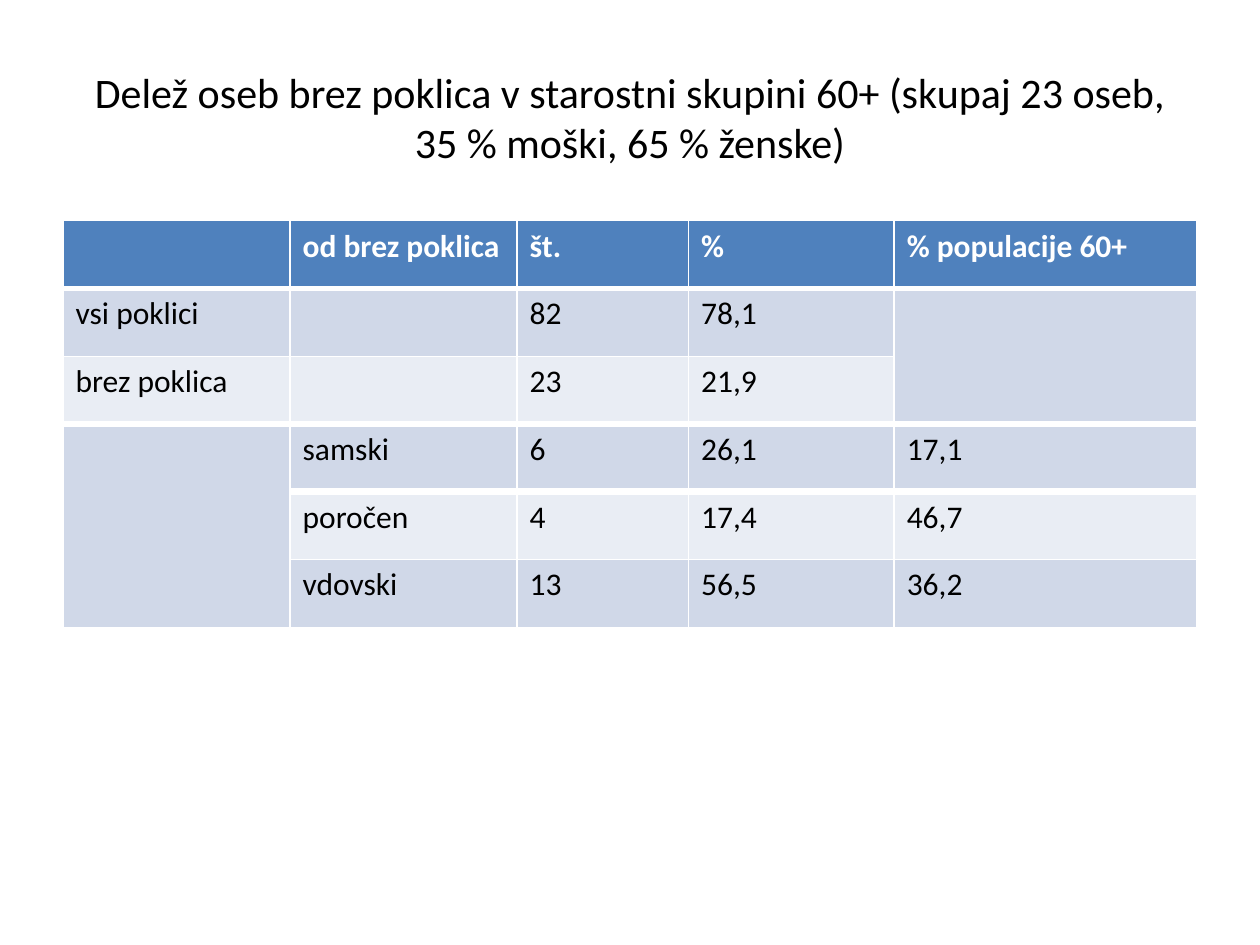
import pptx
import pptx.dml.color
import pptx.enum.text
import pptx.oxml
import pptx.oxml.ns
import pptx.util
from pptx.util import Cm

COLORS = {"header": "4F81BD", "band_dark": "D0D8E8", "band_light": "E9EDF4",
          "white": "FFFFFF", "text": "000000"}
FONT = "Calibri"
TITLE = ("Delež oseb brez poklica v starostni skupini 60+ "
         "(skupaj 23 oseb, 35 % moški, 65 % ženske)")
ROWS = [
    ["", "od brez poklica", "št.", "%", "% populacije 60+"],
    ["vsi poklici", "", "82", "78,1", ""],
    ["brez poklica", "", "23", "21,9", ""],
    ["", "samski", "6", "26,1", "17,1"],
    ["", "poročen", "4", "17,4", "46,7"],
    ["", "vdovski", "13", "56,5", "36,2"],
]
COLUMN_SHARES = [1.8, 1.8, 1.36, 1.63, 2.4]
MERGES = [((1, 4), (2, 4)), ((3, 0), (5, 0))]
THIN_RULE = 1
HEAVY_RULES = {0: 3, 2: 4.5, 3: 4.5}  # points, keyed by the row above the rule


def rgb(name):
    return pptx.dml.color.RGBColor.from_string(COLORS[name])


def format_text(paragraph, size, color, bold=False):
    paragraph.font.name = FONT
    paragraph.font.size = pptx.util.Pt(size)
    paragraph.font.bold = bold
    paragraph.font.color.rgb = rgb(color)


def set_borders(cell, top, bottom):
    """Give a cell thin white sides and white rules of the given points."""
    properties = cell._tc.get_or_add_tcPr()
    widths = {"L": THIN_RULE, "R": THIN_RULE, "T": top, "B": bottom}
    for position, (side, points) in enumerate(widths.items()):
        line = pptx.oxml.parse_xml(
            f'<a:ln{side} {pptx.oxml.ns.nsdecls("a")} w="{pptx.util.Pt(points)}">'
            f'<a:solidFill><a:srgbClr val="{COLORS["white"]}"/></a:solidFill>'
            f'</a:ln{side}>')
        properties.insert(position, line)


def place_title(slide, left, top, width, height):
    title = slide.shapes.title
    title.left, title.top, title.width, title.height = left, top, width, height
    frame = title.text_frame
    frame.text = TITLE
    frame.word_wrap = True
    frame.vertical_anchor = pptx.enum.text.MSO_ANCHOR.MIDDLE
    frame.paragraphs[0].alignment = pptx.enum.text.PP_ALIGN.CENTER
    format_text(frame.paragraphs[0], 24, "text")


def place_occupation_table(slide, left, top, width, height):
    table = slide.shapes.add_table(
        len(ROWS), len(COLUMN_SHARES), left, top, width, height).table
    for column, share in zip(table.columns, COLUMN_SHARES):
        column.width = int(width * share / sum(COLUMN_SHARES))
    for start, end in MERGES:
        table.cell(*start).merge(table.cell(*end))

    for r, labels in enumerate(ROWS):
        is_header = r == 0
        fill = "header" if is_header else "band_dark" if r % 2 else "band_light"
        for c, label in enumerate(labels):
            cell = table.cell(r, c)
            if cell.is_spanned:
                continue
            cell.fill.solid()
            cell.fill.fore_color.rgb = rgb(fill)
            last_row = r + cell.span_height - 1 if cell.is_merge_origin else r
            set_borders(cell, HEAVY_RULES.get(r - 1, THIN_RULE),
                        HEAVY_RULES.get(last_row, THIN_RULE))
            cell.text = label
            format_text(cell.text_frame.paragraphs[0], 18,
                        "white" if is_header else "text", is_header)


def main():
    presentation = pptx.Presentation()
    presentation.slide_width, presentation.slide_height = Cm(25.4), Cm(19.05)
    slide = presentation.slides.add_slide(presentation.slide_layouts[5])
    margin = Cm(1.27)
    content_width = presentation.slide_width - 2 * margin
    place_title(slide, margin, Cm(0.76), content_width, Cm(3.18))
    place_occupation_table(slide, margin, Cm(4.45), content_width, Cm(8.2))
    presentation.save("out.pptx")


if __name__ == "__main__":
    main()
